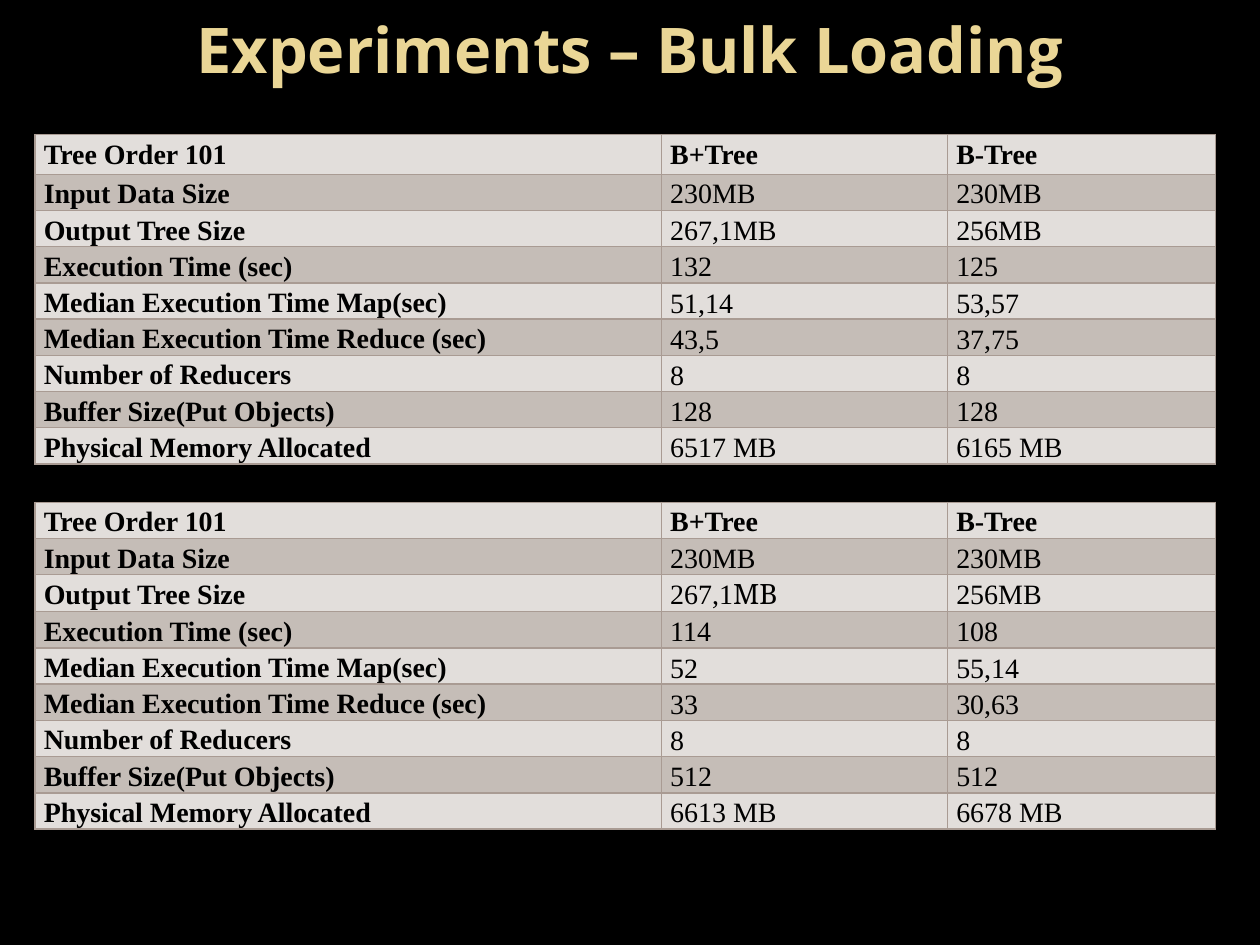
from dataclasses import dataclass

from lxml.etree import SubElement
from pptx import Presentation
from pptx.dml.color import RGBColor
from pptx.enum.text import MSO_ANCHOR, PP_ALIGN
from pptx.oxml.ns import qn
from pptx.util import Pt


@dataclass(frozen=True)
class Theme:
    background: str = "000000"
    title_color: str = "EAD696"
    text_color: str = "000000"
    border_color: str = "A99B93"
    band_colors: tuple = ("E2DEDB", "C5BDB7")
    title_font: str = "Open Sans"
    table_font: str = "Times New Roman"
    unit_font: str = "Cambria"
    title_size: int = 36
    table_size: int = 16


class SlideBuilder:
    def __init__(self, presentation, theme):
        self.theme = theme
        self.slide = presentation.slides.add_slide(presentation.slide_layouts[5])
        fill = self.slide.background.fill
        fill.solid()
        fill.fore_color.rgb = RGBColor.from_string(theme.background)

    def set_font(self, font, name, size, color, bold):
        font.name = name
        font.size = Pt(size)
        font.bold = bold
        font.color.rgb = RGBColor.from_string(color)

    def add_title(self, text, left, top, width, height):
        shape = self.slide.shapes.title
        shape.left, shape.top = Pt(left), Pt(top)
        shape.width, shape.height = Pt(width), Pt(height)
        shape.text_frame.text = text
        shape.text_frame.vertical_anchor = MSO_ANCHOR.MIDDLE
        paragraph = shape.text_frame.paragraphs[0]
        paragraph.alignment = PP_ALIGN.CENTER
        self.set_font(paragraph.font, self.theme.title_font, self.theme.title_size,
                      self.theme.title_color, True)

    def add_table(self, rows, left, top, column_widths, row_heights):
        shape = self.slide.shapes.add_table(
            len(rows), len(column_widths), Pt(left), Pt(top),
            Pt(sum(column_widths)), Pt(sum(row_heights)))
        table = shape.table
        for column, width in zip(table.columns, column_widths):
            column.width = Pt(width)
        for row, height in zip(table.rows, row_heights):
            row.height = Pt(height)
        for row_index, row in enumerate(rows):
            for column_index, text in enumerate(row):
                self.fill_cell(table.cell(row_index, column_index), text,
                               row_index, column_index)
        return table

    def fill_cell(self, cell, text, row_index, column_index):
        # Measurements sit at the bottom of their cells from the fourth row on
        is_label = row_index == 0 or column_index == 0
        is_measurement = column_index > 0 and row_index >= 3
        cell.margin_left = cell.margin_right = Pt(5)
        cell.margin_top = cell.margin_bottom = 0
        cell.vertical_anchor = MSO_ANCHOR.BOTTOM if is_measurement else MSO_ANCHOR.TOP
        self.add_borders(cell)
        cell.fill.solid()
        cell.fill.fore_color.rgb = RGBColor.from_string(
            self.theme.band_colors[row_index % 2])

        cell.text = text
        paragraph = cell.text_frame.paragraphs[0]
        justified = row_index < 6 and not is_measurement
        paragraph.alignment = PP_ALIGN.JUSTIFY if justified else PP_ALIGN.LEFT
        paragraph.line_spacing = 1.15
        paragraph.space_after = Pt(0 if is_measurement else 1)
        self.set_font(paragraph.font, self.theme.table_font, self.theme.table_size,
                      self.theme.text_color, is_label)

    def add_borders(self, cell):
        properties = cell._tc.get_or_add_tcPr()
        for side in ("a:lnL", "a:lnR", "a:lnT", "a:lnB"):
            line = SubElement(properties, qn(side), w=str(Pt(1)))
            fill = SubElement(line, qn("a:solidFill"))
            SubElement(fill, qn("a:srgbClr"), val=self.theme.border_color)


HEADER = ("Tree Order 101", "Β+Tree", "B-Tree")
SHARED_ROWS = [
    HEADER,
    ("Input Data Size", "230ΜΒ", "230MB"),
    ("Output Tree Size", "267,1ΜΒ", "256MB"),
]
MEASURES = (
    "Execution Time (sec)",
    "Median Execution Time Map(sec)",
    "Median Execution Time Reduce (sec)",
    "Number of Reducers",
    "Buffer Size(Put Objects)",
    "Physical Memory Allocated",
)
SMALL_BUFFER = (
    ("132", "51,14", "43,5", "8", "128", "6517 ΜΒ"),
    ("125", "53,57", "37,75", "8", "128", "6165 ΜΒ"),
)
LARGE_BUFFER = (
    ("114", "52", "33", "8", "512", "6613 ΜΒ"),
    ("108", "55,14", "30,63", "8", "512", "6678 ΜΒ"),
)
TABLE_LEFT = 20
COLUMN_WIDTHS = (358, 163.5, 153.2)
ROW_HEIGHT = 20.7


def main():
    presentation = Presentation()
    presentation.slide_width, presentation.slide_height = Pt(720), Pt(540)
    theme = Theme()
    builder = SlideBuilder(presentation, theme)

    # Title
    builder.add_title("Experiments – Bulk Loading", 36, 0, 648, 55)

    # One table per buffer size
    tables = [
        builder.add_table(SHARED_ROWS + list(zip(MEASURES, *values)), TABLE_LEFT, top,
                          COLUMN_WIDTHS, [first_height] + [ROW_HEIGHT] * 8)
        for values, top, first_height in (
            (SMALL_BUFFER, 77, 22.6),
            (LARGE_BUFFER, 287, ROW_HEIGHT),
        )
    ]

    # The unit of the second table's output size has its own font
    paragraph = tables[1].cell(2, 1).text_frame.paragraphs[0]
    paragraph.runs[0].text = "267,1"
    unit = paragraph.add_run()
    unit.text = "ΜΒ"
    unit.font.name = theme.unit_font

    presentation.save("out.pptx")


if __name__ == "__main__":
    main()
